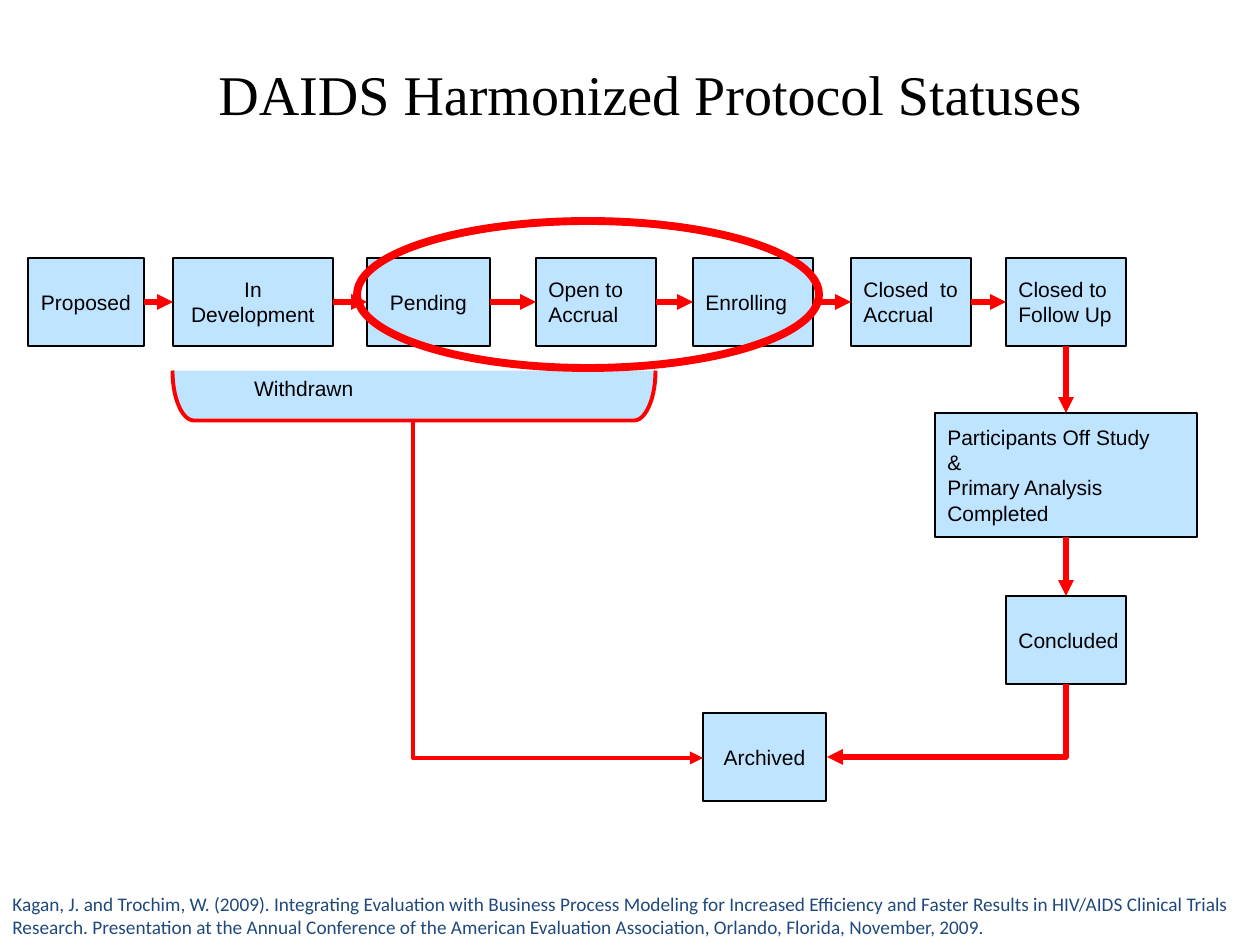
from lxml.etree import SubElement
from pptx import Presentation
from pptx.dml.color import RGBColor
from pptx.enum.shapes import MSO_CONNECTOR, MSO_SHAPE
from pptx.enum.text import MSO_ANCHOR, MSO_AUTO_SIZE, PP_ALIGN
from pptx.oxml.ns import qn
from pptx.util import Emu, Pt

PX = 914400 / 126
BLUE, RED, BLACK, NAVY = "BFE4FF", "FF0000", "000000", "1F497D"


def style(shape, fill, line, width, text="", align=PP_ALIGN.LEFT):
    """Set fill, outline and label; centred labels have no side insets."""
    shape.shadow.inherit = False
    if fill:
        shape.fill.solid()
        shape.fill.fore_color.rgb = RGBColor.from_string(fill)
    else:
        shape.fill.background()
    shape.line.color.rgb = RGBColor.from_string(line)
    shape.line.width = Pt(width)
    frame = shape.text_frame
    frame.text = text
    frame.word_wrap = False
    frame.vertical_anchor = MSO_ANCHOR.MIDDLE
    if align == PP_ALIGN.CENTER:
        frame.margin_left = frame.margin_right = 0
    for paragraph in frame.paragraphs:
        paragraph.alignment = align
        paragraph.font.name = "Arial"
        paragraph.font.size = Pt(12)
        paragraph.font.color.rgb = RGBColor.from_string(BLACK)
        properties = paragraph._p.get_or_add_pPr()
        properties.set("marL", "457200")
        properties.set("indent", "-457200")


def add_arrow(kind, ends, width):
    connector = slide.shapes.add_connector(kind, *(Emu(round(n * PX)) for n in ends))
    connector.line.color.rgb = RGBColor.from_string(RED)
    connector.line.width = Pt(width)
    SubElement(connector.line._get_or_add_ln(), qn("a:tailEnd"), type="triangle")
    SubElement(connector._element.spPr, qn("a:effectLst"))
    return connector


presentation = Presentation()
presentation.slide_width = Emu(round(1260 * PX))
presentation.slide_height = Emu(round(945 * PX))
slide = presentation.slides.add_slide(presentation.slide_layouts[5])

# Title and citation
citation = slide.shapes.add_textbox(0, 0, 0, 0)
for shape, box, text, font, size, color, align, anchor in [
    (slide.shapes.title, (199, 53, 903, 81), "DAIDS Harmonized Protocol Statuses",
     "Times New Roman", 32, BLACK, PP_ALIGN.CENTER, MSO_ANCHOR.TOP),
    (citation, (0, 886, 1260, 59),
     "Kagan, J. and Trochim, W. (2009). Integrating Evaluation with Business Process "
     "Modeling for Increased Efficiency and Faster Results in HIV/AIDS Clinical Trials "
     "Research. Presentation at the Annual Conference of the American Evaluation "
     "Association, Orlando, Florida, November, 2009.",
     "Calibri", 11, NAVY, PP_ALIGN.LEFT, MSO_ANCHOR.MIDDLE),
]:
    shape.left, shape.top, shape.width, shape.height = (Emu(round(n * PX)) for n in box)
    frame = shape.text_frame
    frame.text = text
    frame.word_wrap = True
    frame.auto_size = MSO_AUTO_SIZE.NONE
    frame.vertical_anchor = anchor
    paragraph = frame.paragraphs[0]
    paragraph.alignment = align
    paragraph.font.name = font
    paragraph.font.size = Pt(size)
    paragraph.font.color.rgb = RGBColor.from_string(color)

# Status boxes
ROW_TOP, BOX_HEIGHT = 258, 88
ROW_MIDDLE = ROW_TOP + BOX_HEIGHT // 2
row = [
    (28, 116, "Proposed", PP_ALIGN.CENTER),
    (173, 160, "In\nDevelopment", PP_ALIGN.CENTER),
    (367, 123, "Pending", PP_ALIGN.CENTER),
    (536, 120, "Open to\nAccrual", PP_ALIGN.LEFT),
    (693, 120, "Enrolling", PP_ALIGN.LEFT),
    (851, 120, "Closed  to\nAccrual", PP_ALIGN.LEFT),
    (1006, 120, "Closed to\nFollow Up", PP_ALIGN.LEFT),
]
boxes = [(left, ROW_TOP, width, BOX_HEIGHT, text, align) for left, width, text, align in row]
boxes += [
    (935, 413, 262, 124, "Participants Off Study\n&\nPrimary Analysis\nCompleted", PP_ALIGN.LEFT),
    (1006, 596, 120, BOX_HEIGHT, "Concluded", PP_ALIGN.LEFT),
    (703, 713, 123, BOX_HEIGHT, "Archived", PP_ALIGN.CENTER),
]
for *box, text, align in boxes:
    shape = slide.shapes.add_shape(MSO_SHAPE.RECTANGLE, *(Emu(round(n * PX)) for n in box))
    style(shape, BLUE, BLACK, 0.75, text, align)

# Withdrawn bracket, turned to open upwards
bracket = slide.shapes.add_shape(
    MSO_SHAPE.LEFT_BRACKET, *(Emu(round(n * PX)) for n in (389, 154, 50, 483)))
bracket.adjustments[0] = 0.43
bracket.rotation = 270
style(bracket, BLUE, RED, 2.25, "Withdrawn", PP_ALIGN.CENTER)
frame = bracket.text_frame
frame.margin_left = frame.margin_right = Emu(91440)
frame._txBody.bodyPr.set("vert", "eaVert")

# Straight arrows along the row and down the right side
for (left, width, *_), (next_left, *_) in zip(row, row[1:]):
    add_arrow(MSO_CONNECTOR.STRAIGHT, (left + width, ROW_MIDDLE, next_left, ROW_MIDDLE), 3)
for top, bottom in [(ROW_TOP + BOX_HEIGHT, 413), (537, 596)]:
    add_arrow(MSO_CONNECTOR.STRAIGHT, (1066, top, 1066, bottom), 3)

# One-bend arrows into Archived, given as the ends before rotation
for ends, width, degrees in [((727, 444, 389, 734), 2.5, 270), ((910, 601, 983, 840), 3, 90)]:
    elbow = add_arrow(MSO_CONNECTOR.ELBOW, ends, width)
    properties = elbow._element.spPr
    properties.find(qn("a:prstGeom")).set("prst", "bentConnector2")
    properties.find(qn("a:xfrm")).set("rot", str(degrees * 60000))

# Highlight around the accrual statuses
ellipse = slide.shapes.add_shape(
    MSO_SHAPE.OVAL, *(Emu(round(n * PX)) for n in (357, 221, 462, 147)))
style(ellipse, None, RED, 4.5)

presentation.save("out.pptx")
